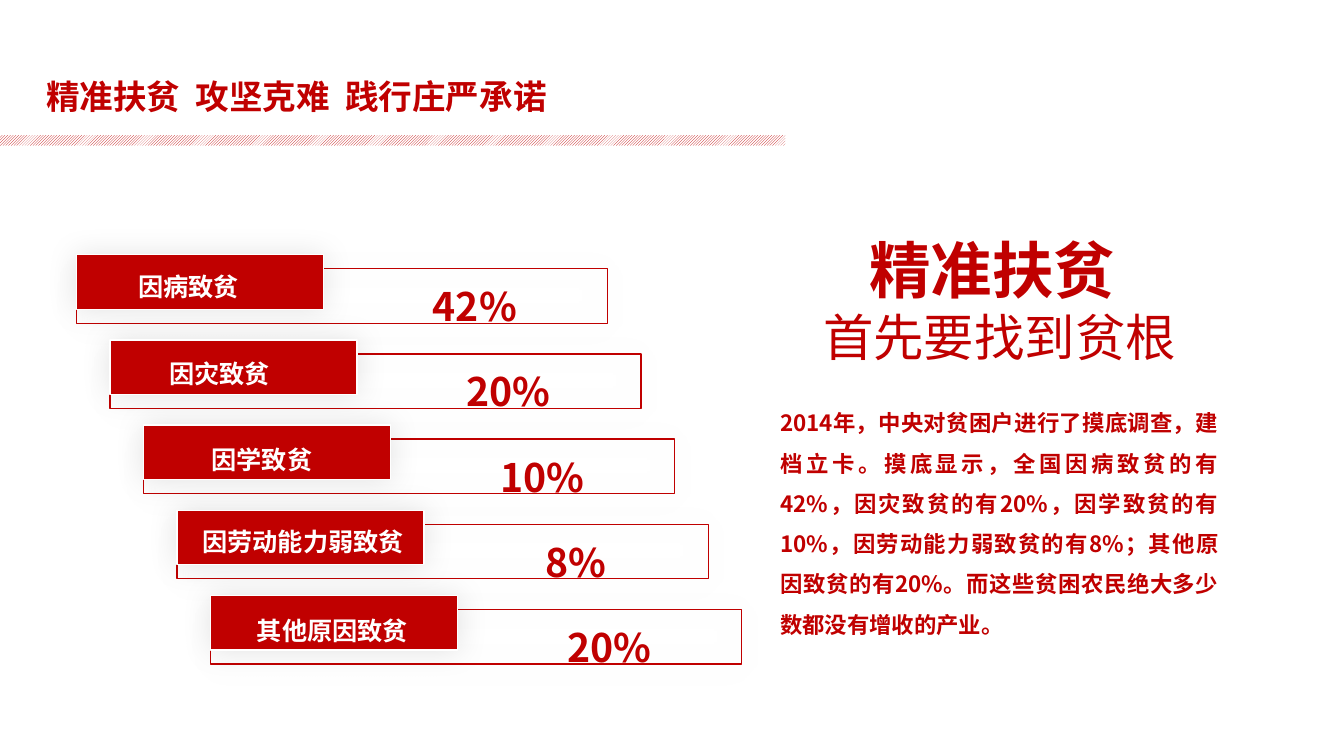
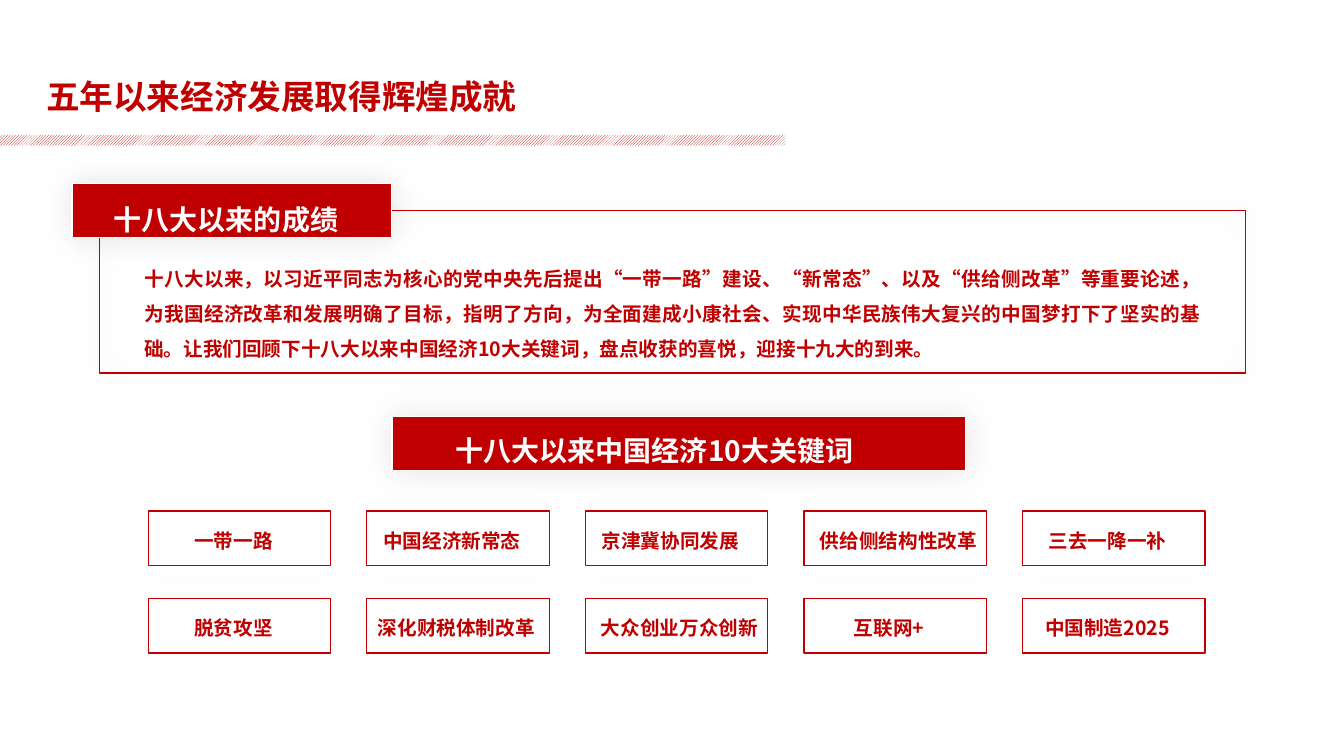
from typing import NamedTuple

from lxml import etree
from pptx import Presentation
from pptx.dml.color import RGBColor
from pptx.enum.dml import MSO_PATTERN
from pptx.enum.shapes import MSO_SHAPE
from pptx.enum.text import MSO_AUTO_SIZE, PP_ALIGN
from pptx.oxml.ns import qn
from pptx.shapes.autoshape import Shape
from pptx.shapes.shapetree import GroupShapes, SlideShapes
from pptx.slide import Slide
from pptx.text.text import _Paragraph
from pptx.util import Pt

RECTANGLE = MSO_SHAPE.RECTANGLE
PLATE = MSO_SHAPE.ROUNDED_RECTANGLE
DIAGONAL = MSO_PATTERN.DARK_UPWARD_DIAGONAL
FIT_SHAPE = MSO_AUTO_SIZE.SHAPE_TO_FIT_TEXT
FIXED = MSO_AUTO_SIZE.NONE
LEFT, CENTER, JUSTIFY = PP_ALIGN.LEFT, PP_ALIGN.CENTER, PP_ALIGN.JUSTIFY

FONT = "Noto Sans CJK SC"
RED = "C00000"
WHITE = "FFFFFF"
BLACK = "000000"
BLANK_LAYOUT = 6
BAR_HEIGHT = 38.9

ShapeTree = SlideShapes | GroupShapes


class Box(NamedTuple):
    left: float
    top: float
    width: float
    height: float


class Line(NamedTuple):
    text: str
    size: float
    color: str = RED
    bold: bool = True


class Margins(NamedTuple):
    side: float
    edge: float


class Cause(NamedTuple):
    label: str
    share: str
    label_left: float
    label_top: float
    label_width: float


class Keyword(NamedTuple):
    text: str
    shift: float = 0
    width: float = 121.7


TITLE_MARGINS = Margins(7.2, 3.6)
BODY_MARGINS = Margins(9.4, 5)
LABEL_MARGINS = Margins(10, 5)

CAUSES = [
    Cause("因病致贫", "42%", 88.6, 177.8, 125.3),
    Cause("因灾致贫", "20%", 110.9, 239.8, 125.3),
    Cause("因学致贫", "10%", 141.1, 301.7, 125.3),
    Cause("因劳动能力弱致贫", "8%", 134.6, 360, 175),
    Cause("其他原因致贫", "20%", 173.5, 423.4, 146.9),
]
KEYWORD_ROWS = [
    [
        Keyword("一带一路"),
        Keyword("中国经济新常态"),
        Keyword("京津冀协同发展"),
        Keyword("供给侧结构性改革", -5.8, 146.9),
        Keyword("三去一降一补"),
    ],
    [
        Keyword("脱贫攻坚"),
        Keyword("深化财税体制改革", -9.4, 146.9),
        Keyword("大众创业万众创新", -10.8, 156.2),
        Keyword("互联网+"),
        Keyword("中国制造2025"),
    ],
]
SURVEY = (
    "2014年，中央对贫困户进行了摸底调查，建档立卡。摸底显示，全国因病致贫的有42%，"
    "因灾致贫的有20%，因学致贫的有10%，因劳动能力弱致贫的有8%；其他原因致贫的有20%。"
    "而这些贫困农民绝大多少数都没有增收的产业。"
)
ACHIEVEMENTS = (
    "十八大以来，以习近平同志为核心的党中央先后提出“一带一路”建设、“新常态”、"
    "以及“供给侧改革”等重要论述，为我国经济改革和发展明确了目标，指明了方向，"
    "为全面建成小康社会、实现中华民族伟大复兴的中国梦打下了坚实的基础。"
    "让我们回顾下十八大以来中国经济10大关键词，盘点收获的喜悦，迎接十九大的到来。"
)


def rgb(value: str) -> RGBColor:
    return RGBColor.from_string(value)


def add_run(paragraph: _Paragraph, line: Line) -> None:
    run = paragraph.add_run()
    run.text = line.text
    run.font.size = Pt(line.size)
    run.font.bold = line.bold
    run.font.color.rgb = rgb(line.color)
    run.font.name = FONT
    east_asian = etree.SubElement(run.font._element, qn("a:ea"))
    east_asian.set("typeface", FONT)


def add_text(
    shapes: ShapeTree,
    box: Box,
    lines: list[Line],
    align: PP_ALIGN = LEFT,
    spacing: float = 1.5,
    margins: Margins = LABEL_MARGINS,
    fit: MSO_AUTO_SIZE = FIT_SHAPE,
    tab_stops: tuple[float, ...] = (),
) -> None:
    frame = shapes.add_textbox(*map(Pt, box)).text_frame
    frame.word_wrap = True
    frame.auto_size = fit
    frame.margin_left = frame.margin_right = Pt(margins.side)
    frame.margin_top = frame.margin_bottom = Pt(margins.edge)
    for index, line in enumerate(lines):
        paragraph = frame.add_paragraph() if index else frame.paragraphs[0]
        paragraph.alignment = align
        paragraph.line_spacing = spacing
        if tab_stops:
            tabs = etree.SubElement(paragraph._p.get_or_add_pPr(), qn("a:tabLst"))
            for stop in tab_stops:
                etree.SubElement(tabs, qn("a:tab"), pos=str(int(Pt(stop))), algn="l")
        add_run(paragraph, line)


def add_soft_shadow(shape: Shape) -> None:
    shape.shadow.inherit = False
    effects = shape._element.spPr.find(qn("a:effectLst"))
    shadow = etree.SubElement(
        effects, qn("a:outerShdw"), blurRad=str(int(Pt(22))), dist="0", dir="0"
    )
    color = etree.SubElement(shadow, qn("a:srgbClr"), val=BLACK)
    etree.SubElement(color, qn("a:alpha"), val="11000")


def add_plate(shapes: ShapeTree, box: Box, filled: bool) -> None:
    plate = shapes.add_shape(PLATE, *map(Pt, box))
    plate.adjustments[0] = 0
    if filled:
        plate.fill.solid()
        plate.fill.fore_color.rgb = rgb(RED)
    else:
        plate.fill.background()
    plate.line.color.rgb = rgb(WHITE if filled else RED)
    plate.line.width = Pt(1)
    add_soft_shadow(plate)


def add_labelled_plate(
    slide: Slide,
    plate: Box,
    label_box: Box,
    label: Line,
    filled: bool = True,
    align: PP_ALIGN = LEFT,
) -> None:
    shapes = slide.shapes.add_group_shape().shapes
    add_plate(shapes, plate, filled)
    add_text(shapes, label_box, [label], align)


def add_titled_slide(
    deck: Presentation, title: str, tab_stops: tuple[float, ...] = ()
) -> Slide:
    slide = deck.slides.add_slide(deck.slide_layouts[BLANK_LAYOUT])
    band = slide.shapes.add_shape(RECTANGLE, Pt(-13.7), Pt(96.5), Pt(574.6), Pt(7.5))
    band.shadow.inherit = False
    band.fill.patterned()
    band.fill.pattern = DIAGONAL
    band.fill.fore_color.rgb = rgb(RED)
    band.fill.back_color.rgb = rgb(WHITE)
    band.line.fill.background()
    add_text(
        slide.shapes, Box(25.9, 54, 434.2, 60.5), [Line(title, 24)],
        spacing=0.9, margins=TITLE_MARGINS, fit=FIXED, tab_stops=tab_stops,
    )
    return slide


def build_causes(deck: Presentation) -> None:
    slide = add_titled_slide(deck, "精准扶贫\t攻坚克难\t践行庄严承诺", (106.8, 213.6))
    shapes = slide.shapes
    add_text(
        shapes, Box(547.9, 277.9, 331.9, 184.3), [Line(SURVEY, 16)],
        JUSTIFY, margins=BODY_MARGINS,
    )
    add_text(
        shapes, Box(513.4, 160.6, 401, 106.6),
        [Line("精准扶贫 ", 44), Line("首先要找到贫根", 36, bold=False)],
        CENTER, spacing=1, margins=BODY_MARGINS,
    )
    for index, cause in enumerate(CAUSES):
        left = 54.5 + 24 * index
        top = 192 + 60.85 * index
        add_plate(shapes, Box(left, top, 379.4, BAR_HEIGHT), filled=False)
        add_text(
            shapes, Box(left + 241.5, top - 12, 86.4, 60.5),
            [Line(cause.share, 28)], CENTER,
        )
        add_labelled_plate(
            slide,
            Box(left, top - 10, 176.4, BAR_HEIGHT),
            Box(cause.label_left, cause.label_top, cause.label_width, 42.5),
            Line(cause.label, 18, WHITE),
        )


def build_achievements(deck: Presentation) -> None:
    slide = add_titled_slide(deck, "五年以来经济发展取得辉煌成就")
    add_text(
        slide.shapes, Box(93.6, 177.1, 774, 82.8), [Line(ACHIEVEMENTS, 14)],
        JUSTIFY, margins=BODY_MARGINS,
    )
    add_plate(slide.shapes, Box(71.3, 150.5, 818.6, 115.9), filled=False)
    add_labelled_plate(
        slide, Box(51.4, 131, 228.2, BAR_HEIGHT), Box(71.3, 127.4, 213.1, 46.1),
        Line("十八大以来的成绩", 20, WHITE),
    )
    add_labelled_plate(
        slide, Box(280, 297.4, 409.7, BAR_HEIGHT), Box(315.4, 293, 381.6, 46.1),
        Line("十八大以来中国经济10大关键词", 20, WHITE),
    )
    for row, keywords in enumerate(KEYWORD_ROWS):
        for column, keyword in enumerate(keywords):
            left = 105.9 + 156.1 * column
            top = 365 + 62.6 * row
            add_labelled_plate(
                slide,
                Box(left, top, 130.3, BAR_HEIGHT),
                Box(left + keyword.shift, top - 0.7, keyword.width, 35.3),
                Line(keyword.text, 14),
                filled=False,
                align=CENTER,
            )


def main() -> None:
    deck = Presentation()
    deck.slide_width = Pt(960)
    deck.slide_height = Pt(540)
    build_causes(deck)
    build_achievements(deck)
    deck.save("out.pptx")


if __name__ == "__main__":
    main()
